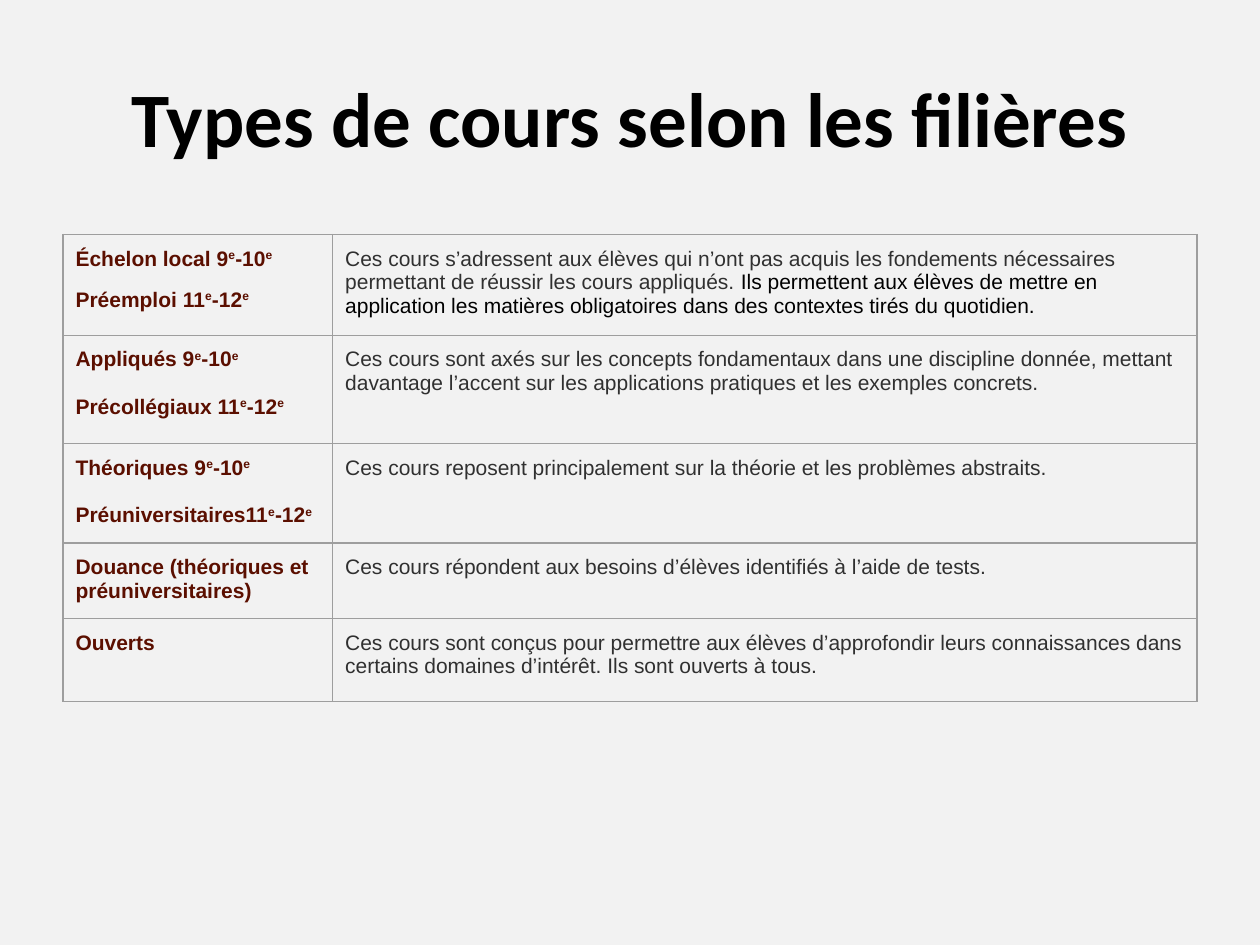
from lxml.etree import SubElement
from pptx import Presentation
from pptx.dml.color import RGBColor
from pptx.enum.text import MSO_ANCHOR as Anchor, PP_ALIGN as Align
from pptx.oxml.ns import qn
from pptx.util import Inches, Pt

COLORS = {
    "background": "F2F2F2",
    "title": "000000",
    "course": "5B0F00",
    "description": "303030",
    "emphasis": "000000",
    "border": "9E9E9E",
}
COLUMN_WIDTHS = [2.14, 6.86]
SUPERSCRIPT = "30000"

# Each row: height, space before its second line, course lines, description.
# A course line is a name with its first and last school year, if any.
# A description is a list of (text, colour name).
COURSES = [
    (0.79, 10, [("Échelon local ", "9", "10"), ("Préemploi ", "11", "12")],
     [("Ces cours s’adressent aux élèves qui n’ont pas acquis les fondements "
       "nécessaires permettant de réussir les cours appliqués. ", "description"),
      ("Ils permettent aux élèves de mettre en application les matières "
       "obligatoires dans des contextes tirés du quotidien.", "emphasis")]),
    (0.86, 13.5, [("Appliqués ", "9", "10"), ("Précollégiaux ", "11", "12")],
     [("Ces cours sont axés sur les concepts fondamentaux dans une discipline "
       "donnée, mettant davantage l’accent sur les applications pratiques et "
       "les exemples concrets.", "description")]),
    (0.79, 13.5, [("Théoriques ", "9", "10"), ("Préuniversitaires", "11", "12")],
     [("Ces cours reposent principalement sur la théorie et les problèmes "
       "abstraits.", "description")]),
    (0.57, 0, [("Douance (théoriques et préuniversitaires)",)],
     [("Ces cours répondent aux besoins d’élèves identifiés à l’aide de tests.",
       "description")]),
    (0.66, 0, [("Ouverts",)],
     [("Ces cours sont conçus pour permettre aux élèves d’approfondir leurs "
       "connaissances dans certains domaines d’intérêt. Ils sont ouverts à tous.",
       "description")]),
]


def rgb(name):
    return RGBColor.from_string(COLORS[name])


def add_run(paragraph, text, color, size=12, font="Arial", bold=False, raised=False):
    run = paragraph.add_run()
    run.text = text
    run.font.name = font
    run.font.size = Pt(size)
    run.font.bold = bold
    run.font.color.rgb = rgb(color)
    if raised:
        run.font._element.set("baseline", SUPERSCRIPT)


def style_cell(cell):
    """Set margins, borders and an empty fill."""
    cell.margin_left = cell.margin_right = Inches(0.1)
    cell.margin_top = cell.margin_bottom = Inches(0.1)
    cell.vertical_anchor = Anchor.TOP
    properties = cell._tc.get_or_add_tcPr()
    for side in ("lnL", "lnR", "lnT", "lnB"):
        line = SubElement(properties, qn(f"a:{side}"), w=str(Pt(0.75)))
        fill = SubElement(line, qn("a:solidFill"))
        SubElement(fill, qn("a:srgbClr"), val=COLORS["border"])
    cell.fill.background()


def write_course(cell, lines, gap):
    """Write course names, with a raised "e" after each school year."""
    frame = cell.text_frame
    for index, (name, *years) in enumerate(lines):
        paragraph = frame.add_paragraph() if index else frame.paragraphs[0]
        paragraph.space_before = Pt(gap if index else 0)
        parts = [name]
        if years:
            first, last = years
            parts = [name + first, "e", "-" + last, "e"]
        for part in parts:
            add_run(paragraph, part, "course", bold=True, raised=part == "e")


def add_title(slide, left, top, width, height):
    frame = slide.shapes.add_textbox(
        Inches(left), Inches(top), Inches(width), Inches(height)).text_frame
    frame.word_wrap = True
    frame.vertical_anchor = Anchor.MIDDLE
    paragraph = frame.paragraphs[0]
    paragraph.alignment = Align.CENTER
    add_run(paragraph, "Types de cours selon les filières", "title",
            size=44, font="Calibri", bold=True)


def add_course_table(slide, left, top, width):
    height = sum(course[0] for course in COURSES)
    table = slide.shapes.add_table(
        len(COURSES), len(COLUMN_WIDTHS),
        Inches(left), Inches(top), Inches(width), Inches(height)).table
    table.first_row = table.horz_banding = False
    for column, share in zip(table.columns, COLUMN_WIDTHS):
        column.width = Inches(width * share / sum(COLUMN_WIDTHS))
    for row, (row_height, gap, lines, description) in zip(table.rows, COURSES):
        row.height = Inches(row_height)
        course_cell, description_cell = row.cells
        style_cell(course_cell)
        style_cell(description_cell)
        write_course(course_cell, lines, gap)
        for text, color in description:
            add_run(description_cell.text_frame.paragraphs[0], text, color)


def main():
    deck = Presentation()
    deck.slide_width, deck.slide_height = Inches(10), Inches(7.5)
    slide = deck.slides.add_slide(deck.slide_layouts[6])
    slide.background.fill.solid()
    slide.background.fill.fore_color.rgb = rgb("background")
    add_title(slide, 0.5, 0.3, 9, 1.25)
    add_course_table(slide, 0.5, 1.86, 9)
    deck.save("out.pptx")


if __name__ == "__main__":
    main()
